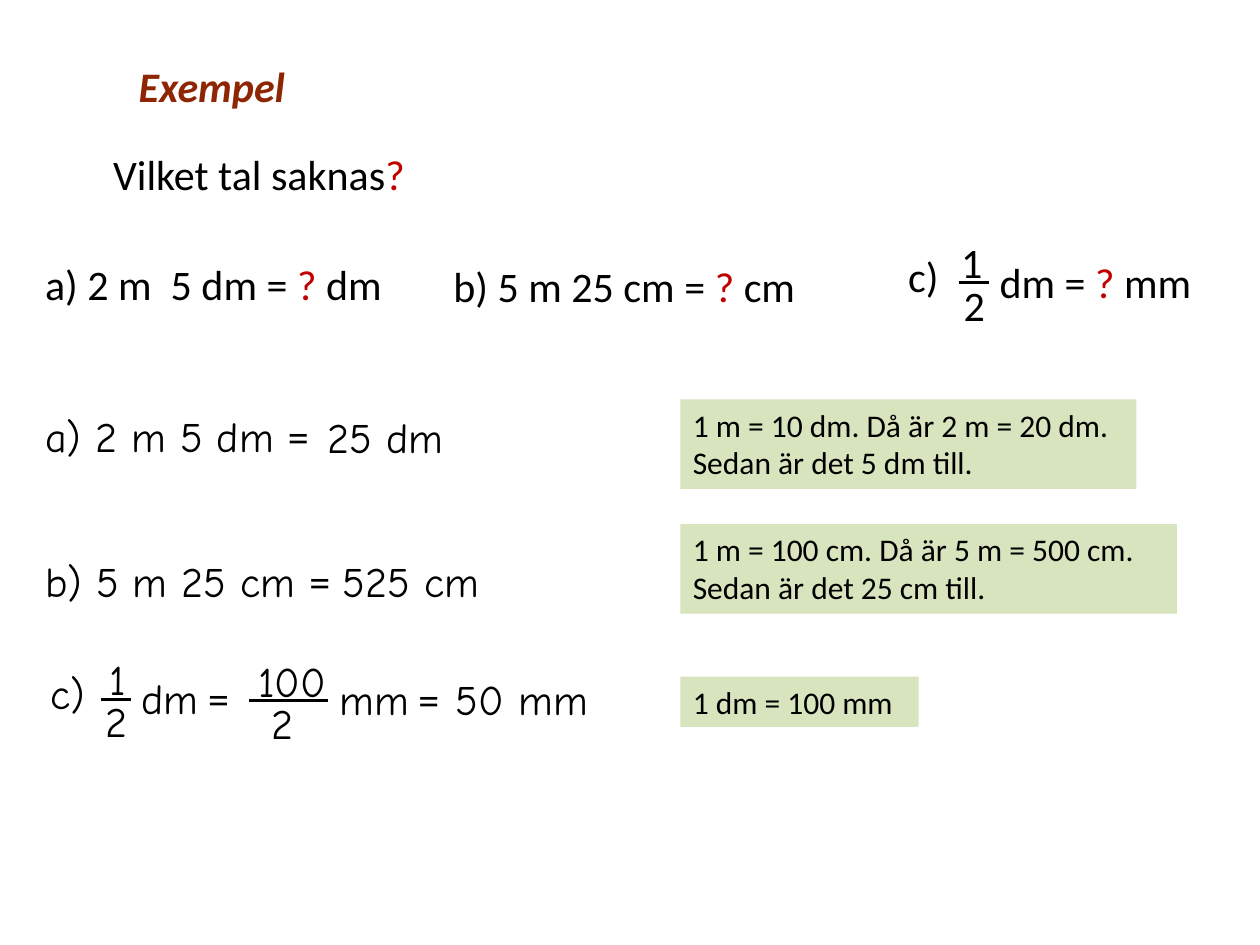
from pptx import Presentation
from pptx.dml.color import RGBColor
from pptx.enum.shapes import MSO_CONNECTOR as LINE
from pptx.enum.text import MSO_ANCHOR as ANCHOR, MSO_AUTO_SIZE as FIT, PP_ALIGN as ALIGN
from pptx.oxml.ns import qn
from pptx.util import Inches, Pt
from lxml.etree import SubElement

BLACK, RED, BROWN, GREEN = "000000", "C00000", "8E2503", "D7E4BD"
PRINT, HAND = "Calibri", "Comic Neue"
ROW = 0.5

TITLE = ("Exempel", 1, 0.43, 1.39)

TASKS = [
    (0.8, 1.13, 5.24, "Vilket tal saknas?"),
    (0.26, 2, 3.15, "a) 2 m\u00a0 5 dm = ? dm"),
    (3.5, 2.02, 3.15, "b) 5 m 25 cm = ? cm"),
    (7.11, 1.94, 0.51, "c)"),
    (7.76, 1.99, 1.98, " dm = ? mm"),
]

ANSWERS = [
    (0.26, 3.21, 2.56, "a) 2 m 5 dm ="),
    (2.5, 3.22, 1.39, "25 dm"),
    (0.26, 4.36, 2.75, "b) 5 m 25 cm ="),
    (2.62, 4.36, 1.39, "525 cm"),
    (0.3, 5.25, 0.51, "c)"),
    (0.95, 5.29, 1.14, " dm ="),
    (2.52, 5.3, 1.14, " mm ="),
    (3.52, 5.3, 1.39, "50 mm"),
]

FRACTIONS = [
    (PRINT, (7.53, 1.83, 0.45, "1"), (7.55, 2.17, 0.43, "2"), (7.61, 7.85, 2.24)),
    (HAND, (0.77, 5.14, 0.45, "1"), (0.74, 5.47, 0.43, "2"), (0.8, 1.04, 5.55)),
    (HAND, (1.95, 5.15, 0.82, "100"), (2.06, 5.49, 0.43, "2"), (1.98, 2.6, 5.56)),
]

HINT_X = 5.4
HINTS = [
    (3.17, 3.62, 0.71, ["1 m = 10 dm. Då är 2 m = 20 dm.", "Sedan är det 5 dm till."]),
    (4.16, 3.94, 0.71, ["1 m = 100 cm. Då är 5 m = 500 cm.", "Sedan är det 25 cm till."]),
    (5.37, 1.89, 0.4, ["1 dm = 100 mm"]),
]


def rgb(code):
    return RGBColor.from_string(code)


def style(run, face, size=24, color=BLACK):
    run.font.name, run.font.size = face, Pt(size)
    run.font.color.rgb = rgb(color)


def split(text, face):
    """Yield text, font and colour, with ? in red and a handwritten = in print."""
    if "?" in text:
        head, tail = text.split("?")
        yield from [(head, face, BLACK), ("?", face, RED), (tail, face, BLACK)]
    elif face == HAND and text.endswith(" ="):
        core = text[:-2]
        if core.startswith(" "):
            yield from [(" ", PRINT, BLACK), (core[1:], HAND, BLACK), (" =", PRINT, BLACK)]
        else:
            yield from [(core + " ", HAND, BLACK), ("=", PRINT, BLACK)]
    else:
        yield text, face, BLACK


def add_box(slide, x, y, w, h=ROW):
    box = slide.shapes.add_textbox(Inches(x), Inches(y), Inches(w), Inches(h))
    box.text_frame.word_wrap = True
    box.text_frame.auto_size = FIT.SHAPE_TO_FIT_TEXT
    return box


def add_text(slide, face, x, y, w, text):
    para = add_box(slide, x, y, w).text_frame.paragraphs[0]
    for part, font, color in split(text, face):
        run = para.add_run()
        run.text = part
        style(run, font, color=color)


def add_hint(slide, y, w, h, lines):
    box = add_box(slide, HINT_X, y, w, h)
    box.fill.solid()
    box.fill.fore_color.rgb = rgb(GREEN)
    box.text_frame.text = "\n".join(lines)
    for para in box.text_frame.paragraphs:
        style(para.runs[0], PRINT, 18)


def add_bar(slide, left, right, y):
    bar = slide.shapes.add_connector(
        LINE.STRAIGHT, Inches(left), Inches(y), Inches(right), Inches(y))
    bar.line.color.rgb = rgb(BLACK)
    bar.line.width = Pt(1.5)
    SubElement(bar._element.spPr, qn("a:effectLst"))


def set_title(slide, text, x, y, w):
    title = slide.shapes.title
    title.left, title.top, title.width, title.height = map(Inches, (x, y, w, ROW))
    frame = title.text_frame
    frame.text = text
    frame.word_wrap = False
    frame.auto_size = FIT.SHAPE_TO_FIT_TEXT
    frame.vertical_anchor = ANCHOR.TOP
    para = frame.paragraphs[0]
    para.alignment = ALIGN.LEFT
    run = para.runs[0]
    style(run, PRINT, color=BROWN)
    run.font.bold = run.font.italic = True


def main():
    deck = Presentation()
    deck.slide_width, deck.slide_height = Inches(10), Inches(7.5)
    slide = deck.slides.add_slide(deck.slide_layouts[5])
    set_title(slide, *TITLE)
    for face, items in ((PRINT, TASKS), (HAND, ANSWERS)):
        for item in items:
            add_text(slide, face, *item)
    for face, top, bottom, bar in FRACTIONS:
        add_text(slide, face, *top)
        add_text(slide, face, *bottom)
        add_bar(slide, *bar)
    for hint in HINTS:
        add_hint(slide, *hint)
    deck.save("out.pptx")


if __name__ == "__main__":
    main()
